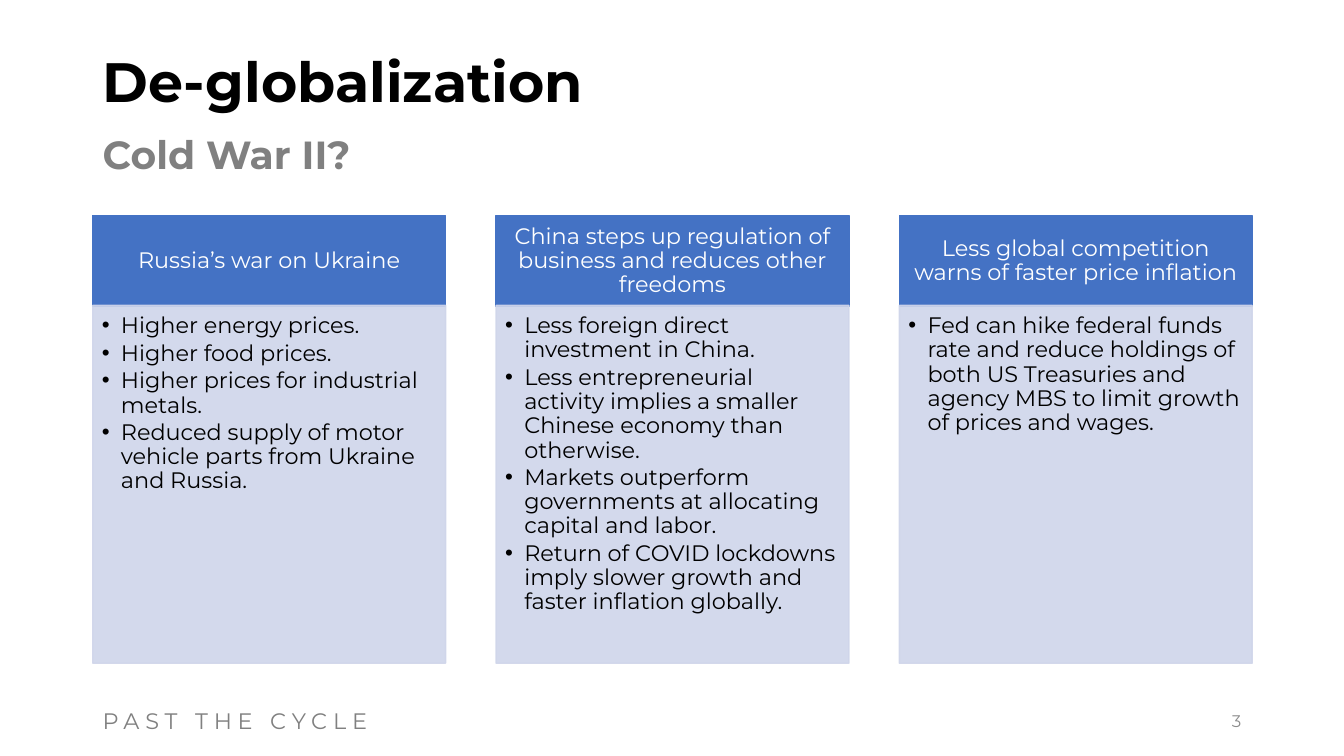
from lxml.etree import SubElement
from pptx import Presentation
from pptx.dml.color import RGBColor
from pptx.enum.shapes import MSO_SHAPE
from pptx.enum.text import MSO_ANCHOR, PP_ALIGN
from pptx.oxml.ns import qn
from pptx.util import Inches, Pt

BLACK = RGBColor(0x00, 0x00, 0x00)
WHITE = RGBColor(0xFF, 0xFF, 0xFF)
GRAY = RGBColor(0x80, 0x80, 0x80)
LIGHT_GRAY = RGBColor(0x8C, 0x8C, 0x8C)
BLUE = RGBColor(0x44, 0x72, 0xC4)
PALE_BLUE = RGBColor(0xCF, 0xD5, 0xEA)

LEFT, WIDTH = 0.92, 11.5
CARD_WIDTH = 3.5
CARD_STEP = (WIDTH - CARD_WIDTH) / 2
HEADER_TOP, HEADER_HEIGHT = 2.14, 0.9
BODY_TOP, BODY_HEIGHT = 3.03, 3.55

CARDS = [
    ("Russia’s war on Ukraine", [
        "Higher energy prices.",
        "Higher food prices.",
        "Higher prices for industrial metals.",
        "Reduced supply of motor vehicle parts from Ukraine and Russia.",
    ]),
    ("China steps up regulation of business and reduces other freedoms", [
        "Less foreign direct investment in China.",
        "Less entrepreneurial activity implies a smaller Chinese economy than otherwise.",
        "Markets outperform governments at allocating capital and labor.",
        "Return of COVID lockdowns imply slower growth and faster inflation globally.",
    ]),
    ("Less global competition warns of faster price inflation", [
        "Fed can hike federal funds rate and reduce holdings of both US Treasuries "
        "and agency MBS to limit growth of prices and wages.",
    ]),
]


class SlideBuilder:
    font_name = "Montserrat"
    card_size = 16

    def __init__(self, slide):
        self.slide = slide

    def add_run(self, paragraph, text, size, color, bold=False, spacing=0):
        run = paragraph.add_run()
        run.text = text
        run.font.name = self.font_name
        run.font.size = Pt(size)
        run.font.bold = bold
        run.font.color.rgb = color
        if spacing:
            run.font._element.set("spc", str(round(spacing * 100)))

    def add_text(self, left, top, width, height, text, size, color, bold=False,
                 spacing=0, line_spacing=1.0, wrap=True,
                 anchor=MSO_ANCHOR.TOP, align=PP_ALIGN.LEFT):
        box = self.slide.shapes.add_textbox(
            Inches(left), Inches(top), Inches(width), Inches(height))
        frame = box.text_frame
        frame.word_wrap = wrap
        frame.vertical_anchor = anchor
        paragraph = frame.paragraphs[0]
        paragraph.alignment = align
        paragraph.line_spacing = line_spacing
        self.add_run(paragraph, text, size, color, bold, spacing)

    def add_panel(self, left, top, height, color, insets, anchor, opacity=100):
        shape = self.slide.shapes.add_shape(
            MSO_SHAPE.RECTANGLE, Inches(left), Inches(top),
            Inches(CARD_WIDTH), Inches(height))
        shape.shadow.inherit = False
        shape.line.width = Pt(1)
        for fill in (shape.fill, shape.line.fill):
            fill.solid()
            fill.fore_color.rgb = color
        if opacity < 100:
            for color_element in shape._element.spPr.iter(qn("a:srgbClr")):
                SubElement(color_element, qn("a:alpha"), val=str(opacity * 1000))
        frame = shape.text_frame
        frame.word_wrap = True
        frame.vertical_anchor = anchor
        (frame.margin_left, frame.margin_top,
         frame.margin_right, frame.margin_bottom) = map(Inches, insets)
        return frame

    def add_header(self, left, text):
        frame = self.add_panel(left, HEADER_TOP, HEADER_HEIGHT, BLUE,
                               (0.12, 0.07, 0.12, 0.07), MSO_ANCHOR.MIDDLE)
        paragraph = frame.paragraphs[0]
        paragraph.alignment = PP_ALIGN.CENTER
        paragraph.line_spacing = 0.9
        self.add_run(paragraph, text, self.card_size, WHITE)

    def add_bullets(self, left, items):
        frame = self.add_panel(left, BODY_TOP, BODY_HEIGHT, PALE_BLUE,
                               (0.09, 0.09, 0.12, 0.14), MSO_ANCHOR.TOP, opacity=90)
        for index, item in enumerate(items):
            paragraph = frame.add_paragraph() if index else frame.paragraphs[0]
            paragraph.alignment = PP_ALIGN.LEFT
            paragraph.level = 1
            paragraph.line_spacing = 0.9
            paragraph.space_after = Pt(2.4)
            properties = paragraph._p.get_or_add_pPr()
            properties.set("marL", str(Inches(0.19)))
            properties.set("indent", str(-Inches(0.19)))
            SubElement(properties, qn("a:buFont"), typeface="Arial")
            SubElement(properties, qn("a:buChar"), char="•")
            self.add_run(paragraph, item, self.card_size, BLACK)


def main():
    presentation = Presentation()
    presentation.slide_width = Inches(13.33)
    presentation.slide_height = Inches(7.5)
    slide = presentation.slides.add_slide(presentation.slide_layouts[6])
    builder = SlideBuilder(slide)

    # Title and subtitle
    builder.add_text(LEFT, 0.49, WIDTH, 0.7, "De-globalization", 39.6, BLACK,
                     bold=True, line_spacing=0.9, anchor=MSO_ANCHOR.MIDDLE)
    builder.add_text(LEFT, 1.3, WIDTH, 0.7, "Cold War II?", 28, GRAY,
                     bold=True, line_spacing=0.9)

    # Three cards
    for index, (heading, items) in enumerate(CARDS):
        left = LEFT + index * CARD_STEP
        builder.add_header(left, heading)
        builder.add_bullets(left, items)

    # Footer and slide number
    builder.add_text(LEFT, 6.97, 3.04, 0.37, "PAST THE CYCLE", 16, GRAY,
                     spacing=4.2, wrap=False)
    builder.add_text(11.33, 6.95, 1.08, 0.4, "3", 12, LIGHT_GRAY,
                     anchor=MSO_ANCHOR.MIDDLE, align=PP_ALIGN.RIGHT)

    presentation.save("out.pptx")


if __name__ == "__main__":
    main()
